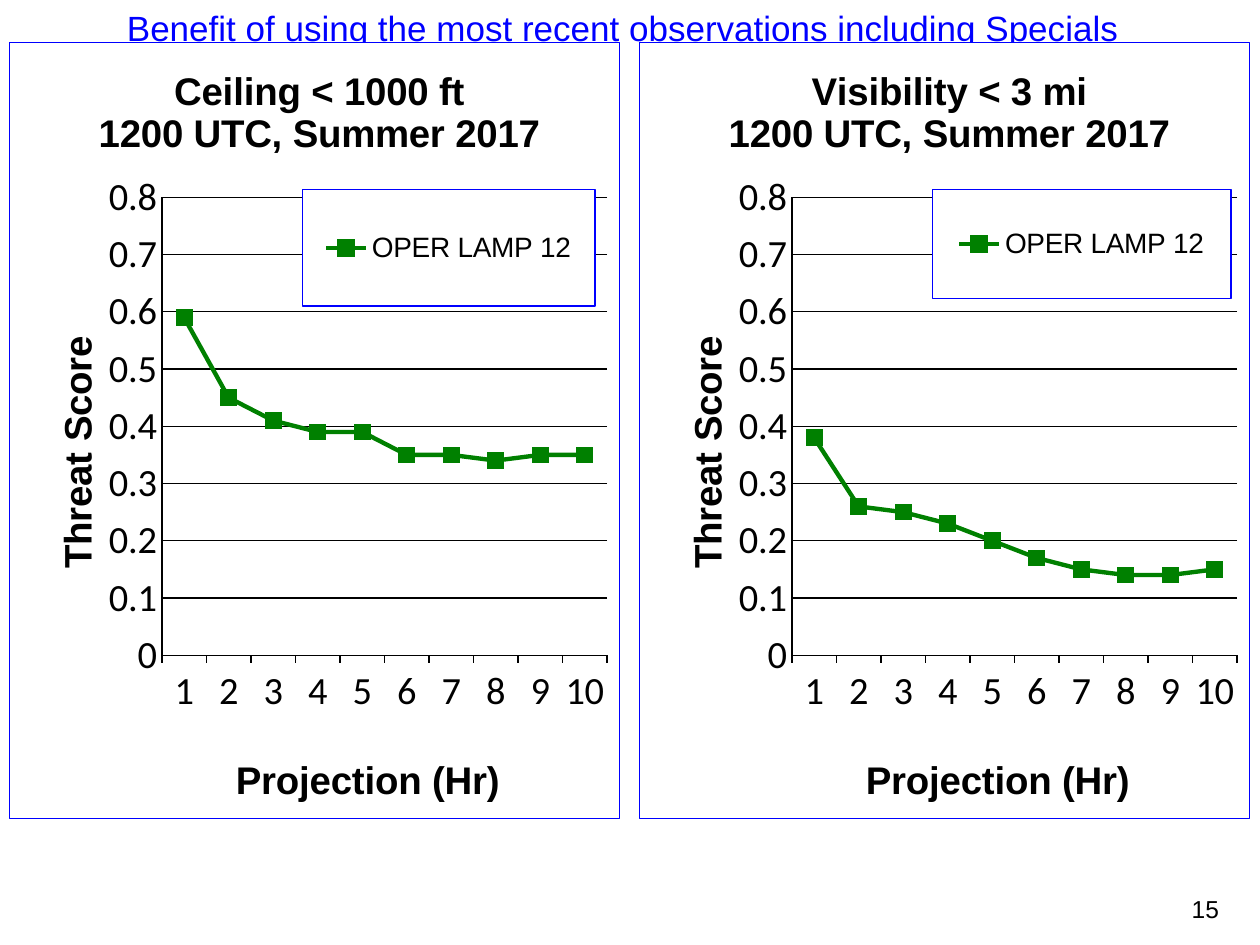
from dataclasses import dataclass

from lxml.etree import SubElement
from pptx import Presentation
from pptx.chart.data import CategoryChartData
from pptx.dml.color import RGBColor
from pptx.enum.chart import XL_CHART_TYPE as ChartType
from pptx.enum.chart import XL_LEGEND_POSITION as LegendPos
from pptx.enum.chart import XL_MARKER_STYLE as Marker
from pptx.enum.chart import XL_TICK_MARK as Tick
from pptx.enum.text import MSO_ANCHOR as Anchor
from pptx.enum.text import PP_ALIGN as Align
from pptx.oxml import parse_xml
from pptx.oxml.ns import nsdecls, qn
from pptx.util import Inches, Pt

BLACK = RGBColor(0x00, 0x00, 0x00)
BLUE = RGBColor(0x00, 0x00, 0xFF)
GREEN = RGBColor(0x00, 0x80, 0x00)

Box = tuple[float, float, float, float]
PLOT_BOX: Box = (0.25, 0.2, 0.73, 0.59)


@dataclass
class ScoreChart:
    left: float
    title: str
    scores: list[float]
    legend_box: Box


CHARTS = [
    ScoreChart(0.07, "Ceiling < 1000 ft\n1200 UTC, Summer 2017",
               [0.59, 0.45, 0.41, 0.39, 0.39, 0.35, 0.35, 0.34, 0.35, 0.35],
               (0.48, 0.19, 0.48, 0.15)),
    ScoreChart(5.07, "Visibility < 3 mi\n1200 UTC, Summer 2017",
               [0.38, 0.26, 0.25, 0.23, 0.2, 0.17, 0.15, 0.14, 0.14, 0.15],
               (0.48, 0.19, 0.49, 0.14)),
]


def style_font(font, size: float, color: RGBColor = BLACK,
               name: str = "Arial", bold: bool = False) -> None:
    font.size, font.name, font.bold = Pt(size), name, bold
    font.color.rgb = color


def style_line(line, color: RGBColor = BLACK, width: float = 0.75) -> None:
    line.color.rgb = color
    line.width = Pt(width)


def make_layout(values: tuple[float, ...], inner: bool = False):
    """Manual layout, in fractions of the chart: x, y and optionally w, h."""
    layout = parse_xml(f"<c:layout {nsdecls('c')}><c:manualLayout/></c:layout>")
    if inner:
        SubElement(layout[0], qn("c:layoutTarget")).set("val", "inner")
    keys = "xywh"[:len(values)]
    for key in keys[:2]:
        SubElement(layout[0], qn(f"c:{key}Mode")).set("val", "edge")
    for key, value in zip(keys, values):
        SubElement(layout[0], qn(f"c:{key}")).set("val", str(value))
    return layout


def framed_box():
    """White fill with a thin blue border."""
    return parse_xml(
        f"<c:spPr {nsdecls('c', 'a')}><a:solidFill><a:srgbClr val='FFFFFF'/></a:solidFill>"
        f"<a:ln w='{Pt(0.75)}'><a:solidFill><a:srgbClr val='{BLUE}'/></a:solidFill></a:ln></c:spPr>")


def set_chart_text(title, text: str, x: float, y: float) -> None:
    """Bold heading of a chart or axis at a fixed place."""
    tf = title.text_frame
    tf.text = text
    for p in tf.paragraphs:
        style_font(p.font, 22, bold=True)
        for r in p.runs:
            style_font(r.font, 22, bold=True)
    el = title._element
    for old in el.findall(qn("c:layout")):
        el.remove(old)
    el.find(qn("c:tx")).addnext(make_layout((x, y)))


def add_score_chart(slide, item: ScoreChart) -> None:
    data = CategoryChartData()
    data.categories = list(range(1, 11))
    data.add_series("OPER LAMP 12", item.scores)
    chart = slide.shapes.add_chart(
        ChartType.LINE_MARKERS, Inches(item.left), Inches(0.33),
        Inches(4.85), Inches(6.17), data).chart
    style_font(chart.font, 10, name="Calibri")
    chart._chartSpace.find(qn("c:chart")).addnext(framed_box())

    # Plot area and headings
    plot_area = chart._chartSpace.chart.plotArea
    for old in plot_area.findall(qn("c:layout")):
        plot_area.remove(old)
    plot_area.insert(0, make_layout(PLOT_BOX, inner=True))
    chart.has_title = True
    set_chart_text(chart.chart_title, item.title, 0.14, 0.03)

    # Axes
    cat, val = chart.category_axis, chart.value_axis
    set_chart_text(cat.axis_title, "Projection (Hr)", 0.36, 0.91)
    set_chart_text(val.axis_title, "Threat Score", 0.06, 0.37)
    for axis, tick in ((cat, Tick.OUTSIDE), (val, Tick.NONE)):
        axis.major_tick_mark, axis.minor_tick_mark = tick, Tick.NONE
        style_font(axis.tick_labels.font, 22, name="Calibri")
        style_line(axis.format.line)
    val.minimum_scale, val.maximum_scale, val.major_unit = 0, 0.8, 0.1
    val.tick_labels.number_format = "General"
    val.tick_labels.number_format_is_linked = False
    val.has_major_gridlines = True
    style_line(val.major_gridlines.format.line)

    # Series
    plot = chart.plots[0]
    plot.vary_by_categories = False
    series = plot.series[0]
    series.smooth = False
    style_line(series.format.line, GREEN, 2.5)
    marker = series.marker
    marker.style, marker.size = Marker.SQUARE, 9
    marker.format.fill.solid()
    marker.format.fill.fore_color.rgb = GREEN
    style_line(marker.format.line, GREEN)

    # Legend over the plot
    chart.has_legend = True
    legend = chart.legend
    legend.position = LegendPos.RIGHT
    legend.include_in_layout = False
    style_font(legend.font, 16)
    el = legend._element
    for old in el.findall(qn("c:layout")):
        el.remove(old)
    overlay = el.find(qn("c:overlay"))
    overlay.set("val", "1")
    overlay.addprevious(make_layout(item.legend_box))
    overlay.addnext(framed_box())


def main() -> None:
    prs = Presentation()
    prs.slide_width, prs.slide_height = Inches(10), Inches(7.5)
    slide = prs.slides.add_slide(prs.slide_layouts[5])

    # Page number
    sp = slide.shapes.add_textbox(Inches(9.36), Inches(6.93), Inches(0.6), Inches(0.57))
    tf = sp.text_frame
    tf.word_wrap, tf.vertical_anchor = True, Anchor.MIDDLE
    tf.text = "15"
    style_font(tf.paragraphs[0].runs[0].font, 14)

    # Charts
    for item in CHARTS:
        add_score_chart(slide, item)

    # Title
    title = slide.shapes.title
    title.left, title.top = Inches(0.03), Inches(0)
    title.width, title.height = Inches(9.83), Inches(0.44)
    tf = title.text_frame
    tf.text = "Benefit of using the most recent observations including Specials"
    tf.word_wrap, tf.vertical_anchor = True, Anchor.TOP
    p = tf.paragraphs[0]
    p.alignment = Align.CENTER
    style_font(p.runs[0].font, 20, BLUE)

    prs.save("out.pptx")


if __name__ == "__main__":
    main()
